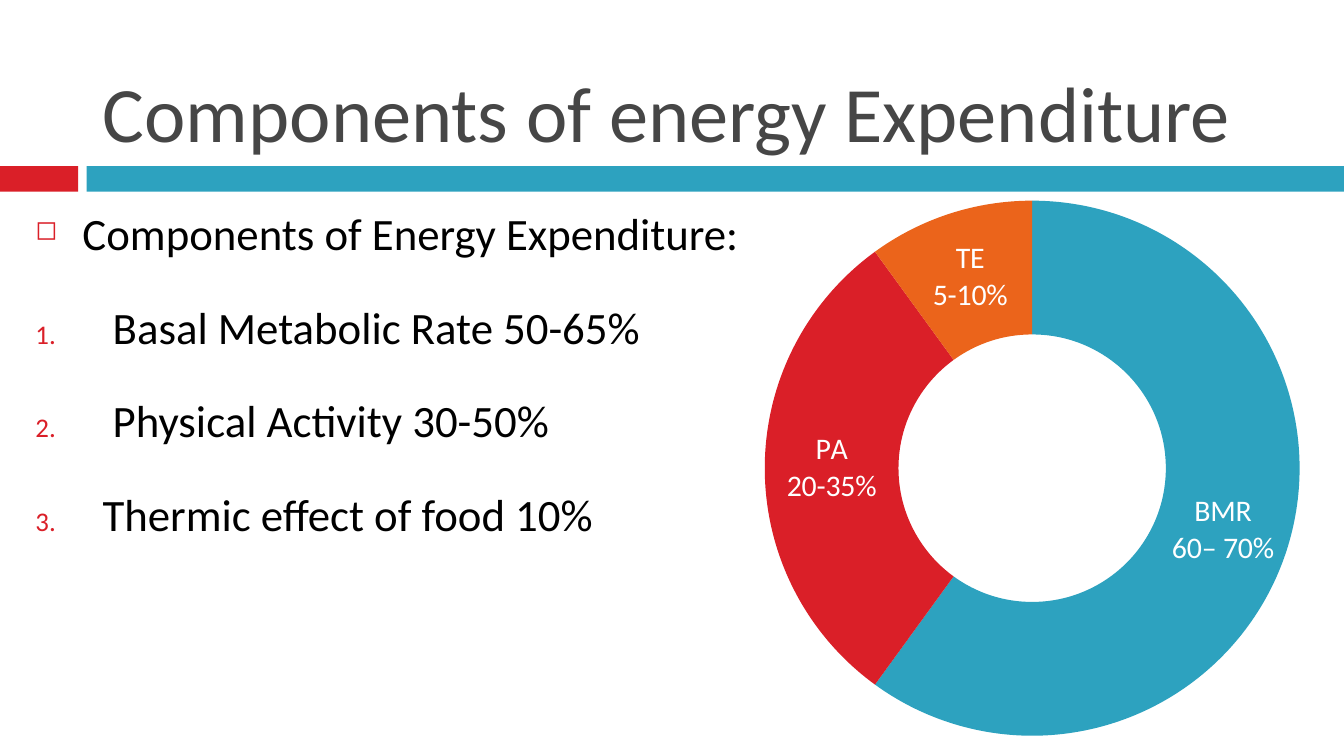
from lxml import etree
from pptx import Presentation
from pptx.chart.data import CategoryChartData
from pptx.dml.color import RGBColor
from pptx.enum.chart import XL_CHART_TYPE
from pptx.enum.shapes import MSO_SHAPE
from pptx.enum.text import MSO_ANCHOR, MSO_AUTO_SIZE, PP_ALIGN
from pptx.oxml import parse_xml
from pptx.oxml.ns import nsdecls, qn
from pptx.util import Cm, Pt

DOUGHNUT = XL_CHART_TYPE.DOUGHNUT
RECTANGLE = MSO_SHAPE.RECTANGLE
BOTTOM = MSO_ANCHOR.BOTTOM
NO_AUTOFIT = MSO_AUTO_SIZE.NONE
LEFT = PP_ALIGN.LEFT
FONT = "Calibri"
RED, TEAL, ORANGE = "DA1F28", "2DA2BF", "EB641B"


def color(hex_string):
    return RGBColor.from_string(hex_string)


def set_font(font, size, hex_string, bold=False):
    font.name = FONT
    font.size = Pt(size)
    font.bold = bold
    font.color.rgb = color(hex_string)


presentation = Presentation()
presentation.slide_width = Cm(25.4)
presentation.slide_height = Cm(14.28)
slide = presentation.slides.add_slide(presentation.slide_layouts[5])

for left, width, fill in [(0, 1.48, RED), (1.64, 23.76, TEAL)]:
    bar = slide.shapes.add_shape(RECTANGLE, Cm(left), Cm(3.14), Cm(width), Cm(0.48))
    bar.shadow.inherit = False
    bar.fill.solid()
    bar.fill.fore_color.rgb = color(fill)
    bar.line.fill.background()

title = slide.shapes.title
title.left, title.top, title.width, title.height = Cm(1.69), Cm(0.32), Cm(22.66), Cm(2.79)
title.text_frame.text = "Components of energy Expenditure"
title.text_frame.auto_size = NO_AUTOFIT
title.text_frame.vertical_anchor = BOTTOM
title_paragraph = title.text_frame.paragraphs[0]
title_paragraph.alignment = LEFT
set_font(title_paragraph.font, 42, "464646")

body = slide.shapes.add_textbox(Cm(0.42), Cm(3.76), Cm(19.69), Cm(10.16))
body.text_frame.word_wrap = True
lines = [
    "Components of Energy Expenditure:",
    " Basal Metabolic Rate 50-65%",
    " Physical Activity 30-50%",
    "Thermic effect of food 10%",
]
body.text_frame.text = "\n".join(lines)
for index, paragraph in enumerate(body.text_frame.paragraphs):
    indent = Cm(1.27) if index else Cm(0.89)
    if index:
        paragraph.line_spacing = 1.5
        paragraph.space_before = Pt(7)
    properties = paragraph._p.get_or_add_pPr()
    properties.set("marL", str(indent))
    properties.set("indent", str(-indent))
    bullet_color = etree.SubElement(properties, qn("a:buClr"))
    etree.SubElement(bullet_color, qn("a:srgbClr"), val=RED)
    etree.SubElement(properties, qn("a:buSzPct"), val="60000")
    if index:
        etree.SubElement(properties, qn("a:buAutoNum"), type="arabicPeriod")
    else:
        etree.SubElement(properties, qn("a:buChar"), char="◻")
    set_font(paragraph.font, 24, "000000")

chart_data = CategoryChartData(number_format="0%")
chart_data.categories = ["BMR", "PA", "Thermic effect of food"]
chart_data.add_series("Series 1", [0.6, 0.3, 0.1])
chart = slide.shapes.add_chart(
    DOUGHNUT, Cm(7.63), Cm(3.79), Cm(23.29), Cm(10.11), chart_data
).chart
chart.has_title = False
chart.has_legend = False
set_font(chart.font, 10, "000000")
plot = chart.plots[0]
plot.vary_by_categories = True
plot._element.find(qn("c:holeSize")).set("val", "50")

plot_area = chart._chartSpace.chart.plotArea
for old_layout in plot_area.findall(qn("c:layout")):
    plot_area.remove(old_layout)
plot_area.insert(0, parse_xml(
    f'<c:layout {nsdecls("c")}><c:manualLayout><c:layoutTarget val="inner"/>'
    '<c:xMode val="edge"/><c:yMode val="edge"/><c:x val="0.27"/><c:y val="0"/>'
    '<c:w val="0.48"/><c:h val="1"/></c:manualLayout></c:layout>'
))

series = plot.series[0]
series_labels = series.data_labels
series_labels.show_value = True
series_labels.show_percentage = True
series_labels.show_category_name = True
series_labels.number_format = "0%"
series_labels.number_format_is_linked = False
set_font(series_labels.font, 12, "FFFFFF", True)

slices = [(TEAL, "BMR\n60– 70%"), (RED, "PA\n20-35%"), (ORANGE, "TE\n5-10%")]
for index, (fill, text) in enumerate(slices):
    point = series.points[index]
    point.format.fill.solid()
    point.format.fill.fore_color.rgb = color(fill)
    point.format.line.fill.background()
    label = point.data_label
    label.text_frame.text = text
    for paragraph in label.text_frame.paragraphs:
        set_font(paragraph.font, 16, "FFFFFF")

presentation.save("out.pptx")
